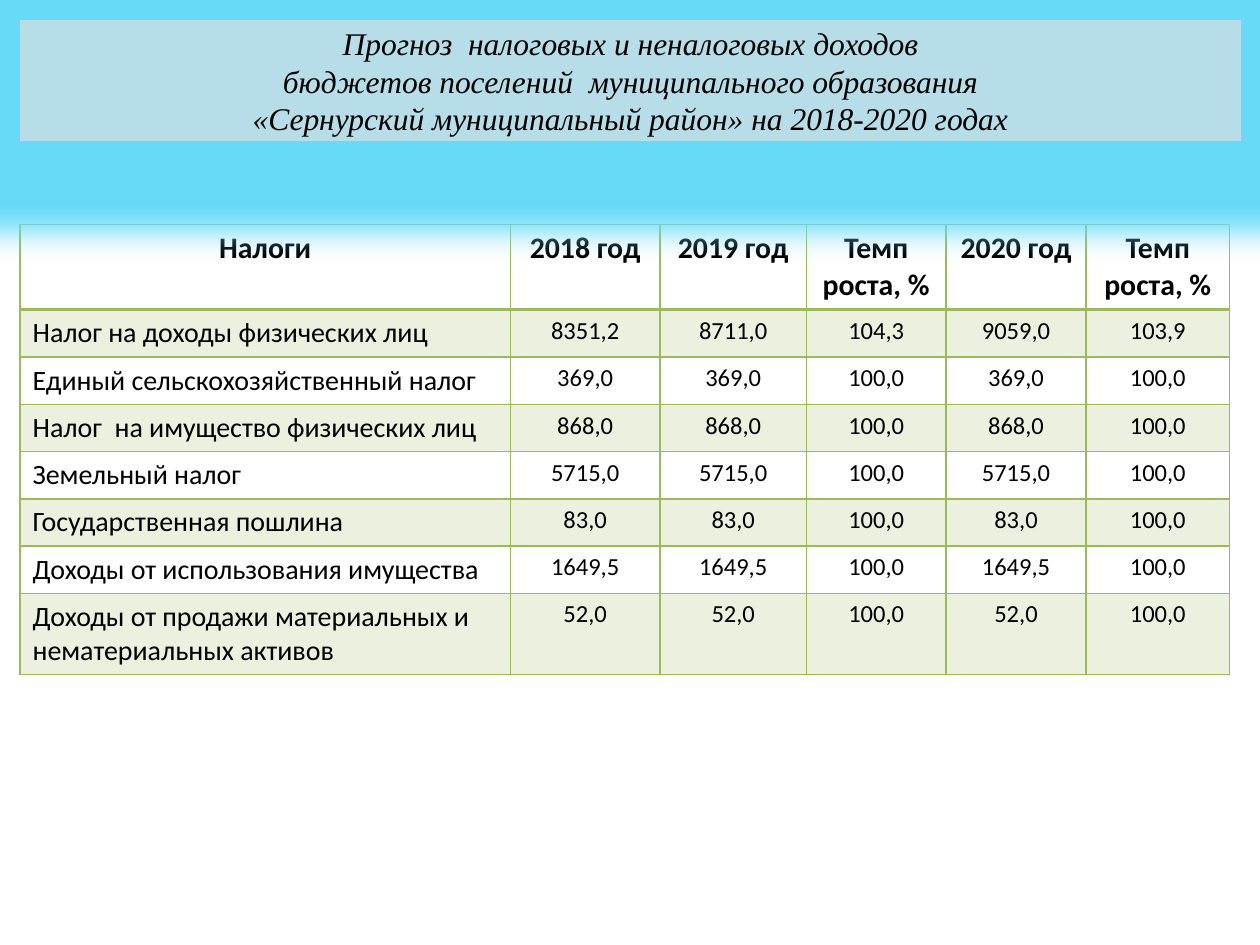
"""Build a slide with the forecast of settlement budget revenues."""
from lxml import etree
from pptx import Presentation, util as u
from pptx.dml.color import RGBColor
from pptx.enum import shapes, text
from pptx.oxml import ns

COLORS = {"ink": "000000", "banner": "B7DEE8", "glow": "66DAF8",
          "grid": "9BBB59", "band": "EBF1DE"}
TITLE = ["Прогноз  налоговых и неналоговых доходов",
         "бюджетов поселений  муниципального образования",
         "«Сернурский муниципальный район» на 2018-2020 годах"]
HEADINGS = ["Налоги", "2018 год", "2019 год", "Темп роста, %",
            "2020 год", "Темп роста, %"]
REVENUES = [
    ("Налог на доходы физических лиц", "8351,2", "8711,0", "104,3", "9059,0", "103,9"),
    ("Единый сельскохозяйственный налог", "369,0", "369,0", "100,0", "369,0", "100,0"),
    ("Налог  на имущество физических лиц", "868,0", "868,0", "100,0", "868,0", "100,0"),
    ("Земельный налог", "5715,0", "5715,0", "100,0", "5715,0", "100,0"),
    ("Государственная пошлина", "83,0", "83,0", "100,0", "83,0", "100,0"),
    ("Доходы от использования имущества", "1649,5", "1649,5", "100,0", "1649,5", "100,0"),
    ("Доходы от продажи материальных и нематериальных активов",
     "52,0", "52,0", "100,0", "52,0", "100,0"),
]
COLUMNS = [3.89, 1.19, 1.16, 1.11, 1.11, 1.14]
ROWS = [0.68] + [0.375] * 6 + [0.64]
MARGIN, TABLE_TOP = 0.16, 1.78


def color(name):
    return RGBColor.from_string(COLORS[name])


def style(paragraph, font_name, size, centred=True, bold=False, italic=False):
    paragraph.alignment = text.PP_ALIGN.CENTER if centred else text.PP_ALIGN.LEFT
    font = paragraph.font
    font.name, font.size = font_name, u.Pt(size)
    font.bold, font.italic = bold, italic
    font.color.rgb = color("ink")


def add_solid(parent, name):
    fill = etree.SubElement(parent, ns.qn("a:solidFill"))
    return etree.SubElement(fill, ns.qn("a:srgbClr"), val=COLORS[name])


def add_borders(cell, bottom):
    properties = cell._tc.get_or_add_tcPr()
    for side, width in (("L", 1), ("R", 1), ("T", 1), ("B", bottom)):
        border = etree.SubElement(properties, ns.qn(f"a:ln{side}"), w=str(u.Pt(width)))
        add_solid(border, "grid")


def add_banner(slide):
    banner = slide.shapes.add_shape(
        shapes.MSO_SHAPE.RECTANGLE, *map(u.Inches, (MARGIN, MARGIN, 9.69, 0.96)))
    banner.fill.solid()
    banner.fill.fore_color.rgb = color("banner")
    banner.line.fill.background()
    effects = etree.SubElement(banner._element.spPr, ns.qn("a:effectLst"))
    glow = etree.SubElement(effects, ns.qn("a:glow"), rad=str(u.Inches(0.5)))
    tint = add_solid(effects, "glow")
    glow.append(tint)
    effects.remove(effects[-1])
    frame = banner.text_frame
    frame.word_wrap = True
    frame.text = "\n".join(TITLE)
    for line in frame.paragraphs:
        style(line, "Times New Roman", 18, italic=True)


def add_revenues(slide):
    records = [HEADINGS, *REVENUES]
    table = slide.shapes.add_table(
        len(ROWS), len(COLUMNS), u.Inches(MARGIN), u.Inches(TABLE_TOP),
        u.Inches(sum(COLUMNS)), u.Inches(sum(ROWS))).table
    for column, width in zip(table.columns, COLUMNS):
        column.width = u.Inches(width)
    for r, (row, height, record) in enumerate(zip(table.rows, ROWS, records)):
        row.height = u.Inches(height)
        for c, (cell, value) in enumerate(zip(row.cells, record)):
            cell.text = value
            heading = r == 0
            size = 17 if heading else 14 if c else 16
            style(cell.text_frame.paragraphs[0], "Calibri", size,
                  centred=heading or c > 0, bold=heading)
            add_borders(cell, 2 if heading else 1)
            if r % 2:
                cell.fill.solid()
                cell.fill.fore_color.rgb = color("band")
            else:
                cell.fill.background()


def main():
    deck = Presentation()
    deck.slide_width, deck.slide_height = u.Inches(10), u.Inches(7.5)
    slide = deck.slides.add_slide(deck.slide_layouts[6])
    add_revenues(slide)
    add_banner(slide)
    deck.save("out.pptx")


if __name__ == "__main__":
    main()
